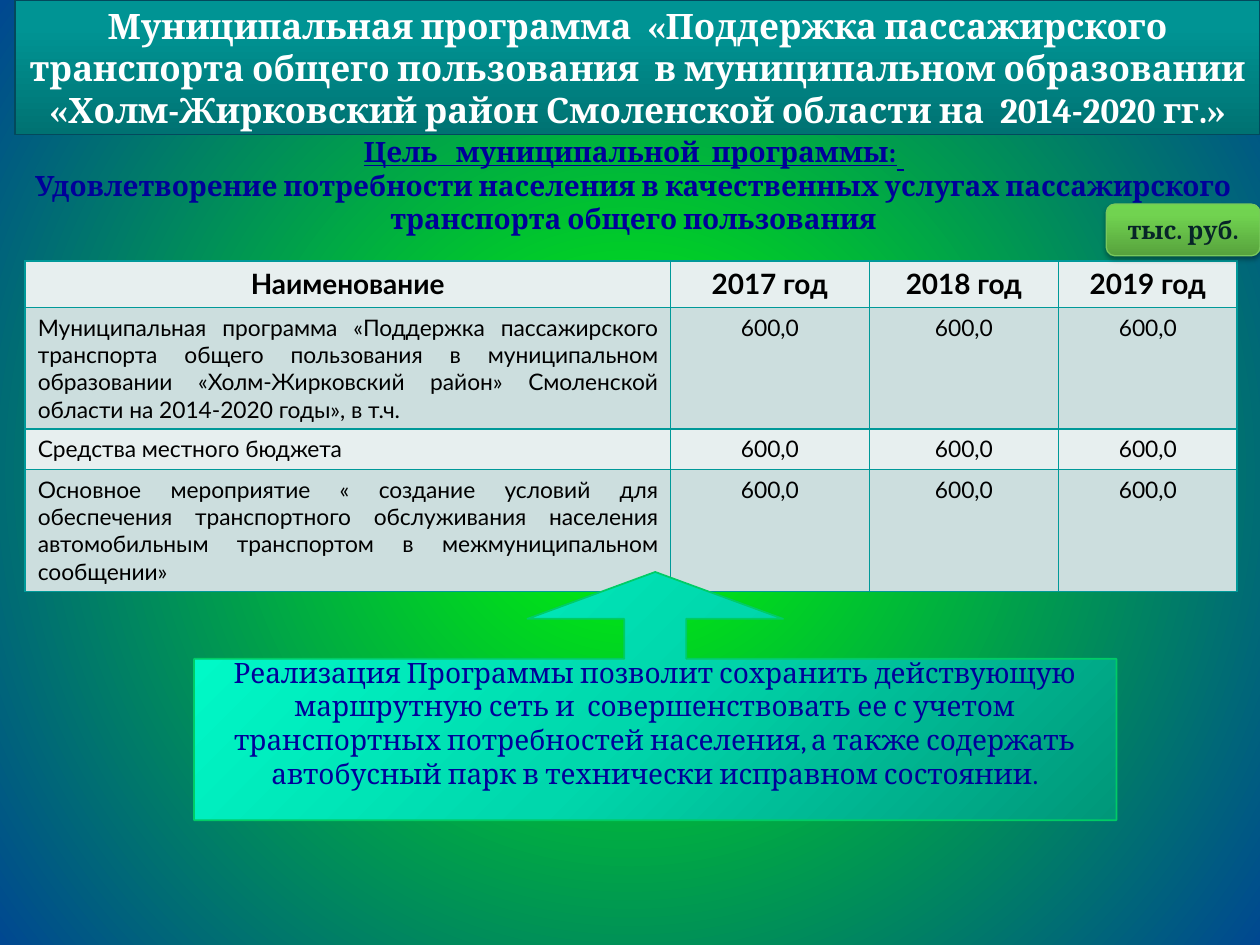
import lxml.etree
import pptx
import pptx.dml.color
import pptx.enum.shapes
import pptx.enum.text
import pptx.oxml
import pptx.oxml.ns
import pptx.util

color = pptx.dml.color.RGBColor.from_string
qn = pptx.oxml.ns.qn
ns = pptx.oxml.ns.nsdecls("a")
Pt = pptx.util.Pt
align = pptx.enum.text.PP_ALIGN
anchor = pptx.enum.text.MSO_ANCHOR
presets = pptx.enum.shapes.MSO_SHAPE


def shade(fill, owner, stops, direction):
    fill.gradient()
    gradient = owner.find(".//" + qn("a:gradFill"))
    for child in list(gradient):
        gradient.remove(child)
    marks = "".join(
        f'<a:gs pos="{share * 1000}"><a:srgbClr val="{tone}"/></a:gs>' for share, tone in stops
    )
    for part in (f"<a:gsLst {ns}>{marks}</a:gsLst>", direction):
        gradient.append(pptx.oxml.parse_xml(part))


def write(paragraph, words, font, size, tone, bold=False, underline=False, alignment=align.CENTER):
    paragraph.alignment = alignment
    run = paragraph.add_run()
    run.text = words
    run.font.name = font
    run.font.size = Pt(size)
    run.font.color.rgb = color(tone)
    run.font.bold = bold
    run.font.underline = underline


deck = pptx.Presentation()
deck.slide_width = pptx.util.Inches(10)
deck.slide_height = pptx.util.Inches(7.5)
column = deck.slide_width / 100
row = deck.slide_height / 100
slide = deck.slides.add_slide(deck.slide_layouts[1])
shade(
    slide.background.fill, slide.element, [(0, "00FF00"), (100, "004891")],
    f'<a:path {ns} path="circle"><a:fillToRect l="50000" t="50000" r="50000" b="50000"/></a:path>',
)

heading, goal = slide.placeholders
budget = slide.shapes.add_table(
    4, 4, round(2 * column), round(27.6 * row), round(96.2 * column), round(33.5 * row)
).table
outcome = slide.shapes.add_shape(presets.UP_ARROW_CALLOUT, 0, 0, 0, 0)
units = slide.shapes.add_shape(presets.ROUNDED_RECTANGLE, 0, 0, 0, 0)

for box, left, top, width, height in (
    (heading, 1.2, 0, 98.8, 14.27),
    (goal, 2, 14.27, 96.1, 12.53),
    (outcome, 15.4, 60.53, 73.2, 26.27),
    (units, 87.8, 21.6, 12.2, 5.47),
):
    box.left, box.width = round(left * column), round(width * column)
    box.top, box.height = round(top * row), round(height * row)
    box.text_frame.word_wrap = True
    box.text_frame.auto_size = pptx.enum.text.MSO_AUTO_SIZE.NONE
    box.text_frame.vertical_anchor = anchor.MIDDLE

for box, stops, angle, edge, weight in (
    (heading, [(0, "007272"), (80, "009494"), (100, "009595")], 270, "03495C", 0.75),
    (outcome, [(0, "009779"), (50, "00D7AC"), (100, "00FFCC")], 225, "00CC66", 1),
    (units, [(0, "57A23D"), (80, "71D350"), (100, "70D64E")], 270, "78C85D", 0.75),
):
    shade(box.fill, box.element, stops, f'<a:lin {ns} ang="{angle * 60000}" scaled="0"/>')
    box.line.color.rgb = color(edge)
    box.line.width = Pt(weight)
    box.shadow.inherit = False

units.element.find(".//" + qn("a:effectLst")).append(pptx.oxml.parse_xml(
    f'<a:outerShdw {ns} blurRad="{Pt(3.1)}" dist="{Pt(1.8)}" dir="5400000" rotWithShape="0">'
    '<a:srgbClr val="000000"><a:alpha val="35000"/></a:srgbClr></a:outerShdw>'
))

title_frame = heading.text_frame
title_frame.margin_left = title_frame.margin_right = pptx.util.Inches(0.05)
title_frame.margin_top = title_frame.margin_bottom = 0
write(
    title_frame.paragraphs[0],
    "Муниципальная программа  «Поддержка пассажирского транспорта общего пользования  "
    "в муниципальном образовании «Холм-Жирковский район Смоленской области на  2014-2020 гг.»",
    "Cambria", 20, "FFFFFF", bold=True,
)

goal_frame = goal.text_frame
goal_frame.vertical_anchor = anchor.TOP
goal_frame.margin_left = pptx.util.Inches(0.05)
goal_frame.margin_top = goal_frame.margin_right = goal_frame.margin_bottom = 0
goal_label = goal_frame.paragraphs[0]
goal_text = goal_frame.add_paragraph()
for paragraph in (goal_label, goal_text):
    properties = paragraph._p.get_or_add_pPr()
    properties.set("marL", "0")
    properties.set("indent", "0")
    lxml.etree.SubElement(properties, qn("a:buNone"))
    paragraph.space_before = Pt(0)
write(goal_label, "Цель   муниципальной  программы:", "Cambria", 16, "000099", True, True)
write(goal_label, " ", "Lato", 16, "000099", False, True)
write(
    goal_text,
    "Удовлетворение потребности населения в качественных услугах пассажирского "
    "транспорта общего пользования",
    "Cambria", 16, "000099", True,
)

outcome.adjustments[0] = 0.25
outcome.adjustments[1] = 0.515
outcome.adjustments[2] = 0.189
outcome.adjustments[3] = 0.65
outcome.text_frame.margin_bottom = pptx.util.Inches(0.32)
write(
    outcome.text_frame.paragraphs[0],
    "Реализация Программы позволит сохранить действующую маршрутную сеть и  "
    "совершенствовать ее с учетом транспортных потребностей населения, а также содержать "
    "автобусный парк в технически исправном состоянии.",
    "Cambria", 16, "000099",
)
write(units.text_frame.paragraphs[0], "тыс. руб.", "Cambria", 14, "072428", True)

for budget_column, share in zip(budget.columns, (51.2, 15.8, 15, 14.2)):
    budget_column.width = round(share * column)
for budget_row, share in zip(budget.rows, (4.93, 12.53, 4.27, 11.73)):
    budget_row.height = round(share * row)

amounts = ["600,0"] * 3
entries = (
    ["Наименование", "2017 год", "2018 год", "2019 год"],
    ["Муниципальная программа «Поддержка пассажирского транспорта общего пользования "
     "в муниципальном образовании «Холм-Жирковский район» Смоленской области "
     "на 2014-2020 годы», в т.ч.", *amounts],
    ["Средства местного бюджета", *amounts],
    ["Основное мероприятие « создание условий для обеспечения транспортного обслуживания "
     "населения автомобильным транспортом в межмуниципальном сообщении»", *amounts],
)
for r, entry in enumerate(entries):
    for c, words in enumerate(entry):
        cell = budget.cell(r, c)
        header = r == 0
        write(
            cell.text_frame.paragraphs[0], words, "Lato", 16 if header else 13, "000000", header,
            alignment=align.JUSTIFY if c == 0 and not header else align.CENTER,
        )
        cell.fill.solid()
        cell.fill.fore_color.rgb = color("CCDEDE" if r % 2 else "E7EFEF")
        for place, side in enumerate(("lnL", "lnR", "lnT", "lnB")):
            cell._tc.get_or_add_tcPr().insert(place, pptx.oxml.parse_xml(
                f'<a:{side} {ns} w="{Pt(1)}"><a:solidFill><a:srgbClr val="009999"/>'
                f"</a:solidFill></a:{side}>"
            ))

deck.save("out.pptx")
